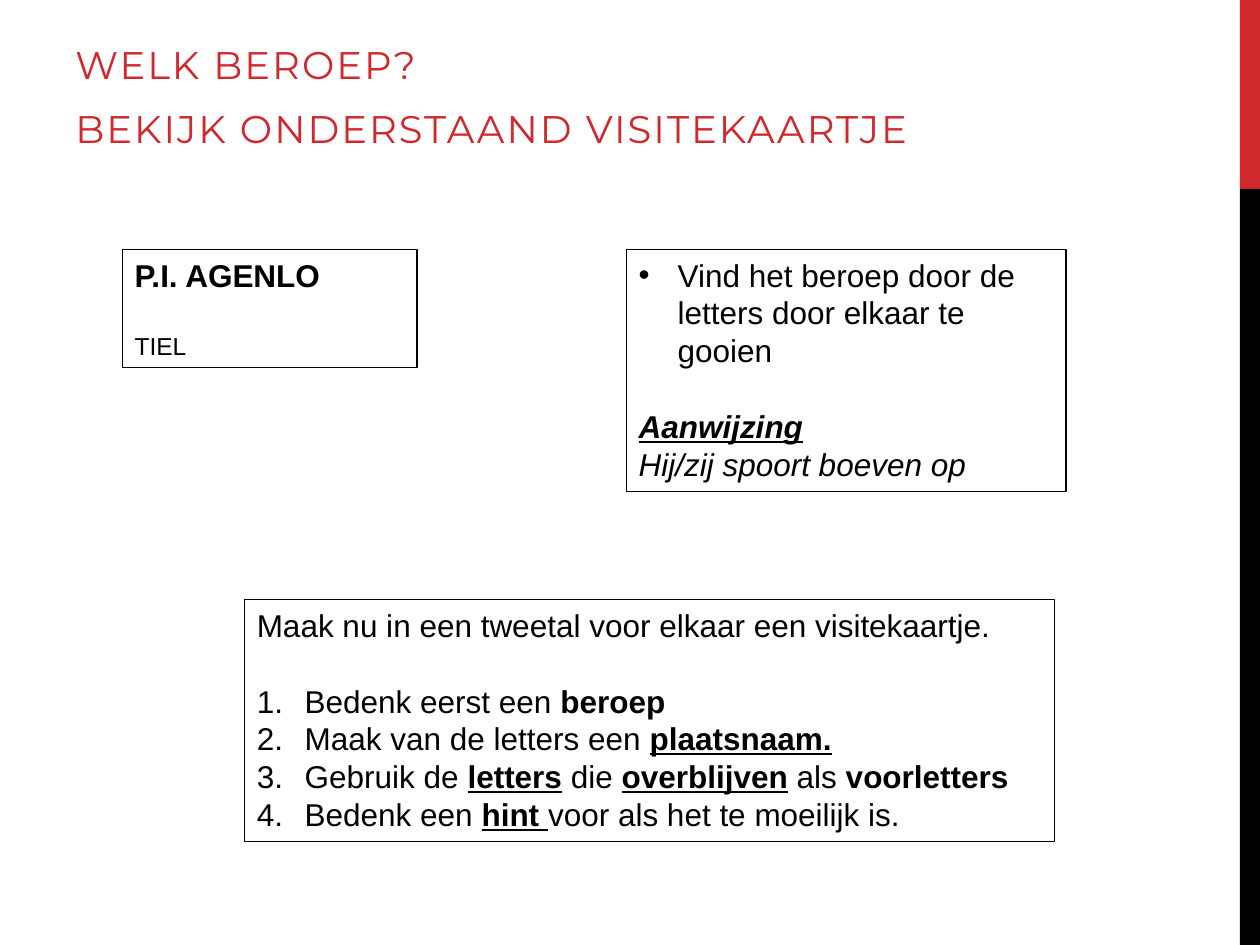
from lxml import etree
from pptx import Presentation
from pptx.dml.color import RGBColor
from pptx.enum.shapes import MSO_SHAPE
from pptx.enum.text import MSO_ANCHOR, PP_ALIGN
from pptx.oxml.ns import qn
from pptx.util import Inches, Pt

RECTANGLE = MSO_SHAPE.RECTANGLE
LEFT = PP_ALIGN.LEFT
TOP, BOTTOM = MSO_ANCHOR.TOP, MSO_ANCHOR.BOTTOM

# Content
WIDTH, HEIGHT = 10, 7.5
RED, BLACK = "D1282E", "000000"
BOLD = {"bold": True}
UNDERLINED = {"bold": True, "underline": True}
BULLET = ("buChar", {"char": "•"}, 0.31)
NUMBER = ("buAutoNum", {"type": "arabicPeriod"}, 0.38)
BLANK_LINE = 21.6

TITLE = ["WELK BEROEP?", "BEKIJK ONDERSTAAND VISITEKAARTJE"]

# Each paragraph: runs of (text, format), list marker, space before in points
CARD = [
    ([("P.I. AGENLO", BOLD)], None, 0),
    ([("TIEL", {"size": Pt(14)})], None, BLANK_LINE),
]
TASK = [
    ([("Vind het beroep door de letters door elkaar te gooien", {})], BULLET, 0),
    ([("Aanwijzing", {**UNDERLINED, "italic": True})], None, BLANK_LINE),
    ([("Hij/zij spoort boeven op", {"italic": True})], None, 0),
]
STEPS = [
    ([("Maak nu in een tweetal voor elkaar een visitekaartje.", {})], None, 0),
    ([("Bedenk eerst een ", {}), ("beroep", BOLD)], NUMBER, BLANK_LINE),
    ([("Maak van de letters een ", {}), ("plaatsnaam.", UNDERLINED)], NUMBER, 0),
    ([("Gebruik de ", {}), ("letters", UNDERLINED), (" die ", {}),
      ("overblijven", UNDERLINED), (" als ", {}), ("voorletters", BOLD)], NUMBER, 0),
    ([("Bedenk een ", {}), ("hint ", UNDERLINED),
      ("voor als het te moeilijk is.", {})], NUMBER, 0),
]
BOXES = [
    ((0.97, 1.98, 2.34, 0.94), CARD),
    ((4.97, 1.98, 3.49, 1.92), TASK),
    ((1.94, 4.76, 6.43, 1.92), STEPS),
]


def color(value):
    return RGBColor.from_string(value)


def add_rectangle(slide, place, fill=None, line=None):
    shape = slide.shapes.add_shape(RECTANGLE, *map(Inches, place))
    shape.shadow.inherit = False
    if fill:
        shape.fill.solid()
        shape.fill.fore_color.rgb = color(fill)
    else:
        shape.fill.background()
    if line:
        shape.line.color.rgb = color(line)
        shape.line.width = Pt(0.75)
    else:
        shape.line.fill.background()
    return shape


def add_run(paragraph, text, font_color, **formats):
    run = paragraph.add_run()
    run.text = text
    for name, value in formats.items():
        setattr(run.font, name, value)
    run.font.color.rgb = color(font_color)
    return run


def add_marker(paragraph, marker):
    tag, attributes, indent = marker
    properties = paragraph._p.get_or_add_pPr()
    properties.set("marL", str(Inches(indent)))
    properties.set("indent", str(-Inches(indent)))
    if marker is BULLET:
        etree.SubElement(properties, qn("a:buFont"), typeface="Arial")
    etree.SubElement(properties, qn(f"a:{tag}"), **attributes)


def paragraphs_for(frame, items):
    for index, item in enumerate(items):
        yield frame.paragraphs[0] if index == 0 else frame.add_paragraph(), item


def add_title(slide):
    frame = slide.shapes.add_textbox(*map(Inches, (0.5, 0.25, 8.5, 1.17))).text_frame
    frame.word_wrap = True
    frame.vertical_anchor = BOTTOM
    frame.margin_bottom = Inches(0.22)
    for paragraph, text in paragraphs_for(frame, TITLE):
        paragraph.space_before, paragraph.space_after = Pt(4.4), Pt(6)
        run = add_run(paragraph, text, RED, name="Montserrat", size=Pt(22))
        run.font._element.set("spc", "120")


def add_text_box(slide, place, content):
    frame = add_rectangle(slide, place, line=BLACK).text_frame
    frame.word_wrap = True
    frame.vertical_anchor = TOP
    for paragraph, (runs, marker, space) in paragraphs_for(frame, content):
        paragraph.alignment = LEFT
        paragraph.space_before = Pt(space)
        if marker:
            add_marker(paragraph, marker)
        for text, formats in runs:
            add_run(paragraph, text, BLACK, **{"name": "Arial", "size": Pt(18), **formats})


def main():
    presentation = Presentation()
    presentation.slide_width, presentation.slide_height = Inches(WIDTH), Inches(HEIGHT)
    slide = presentation.slides.add_slide(presentation.slide_layouts[6])

    # Side band: the top fifth is red, the rest black
    band_width, split = 0.16, HEIGHT / 5
    band_left = WIDTH - band_width
    add_rectangle(slide, (band_left, 0, band_width, split), fill=RED)
    add_rectangle(slide, (band_left, split, band_width, HEIGHT - split), fill=BLACK)

    # Title and outlined text boxes
    add_title(slide)
    for place, content in BOXES:
        add_text_box(slide, place, content)

    presentation.save("out.pptx")


if __name__ == "__main__":
    main()
